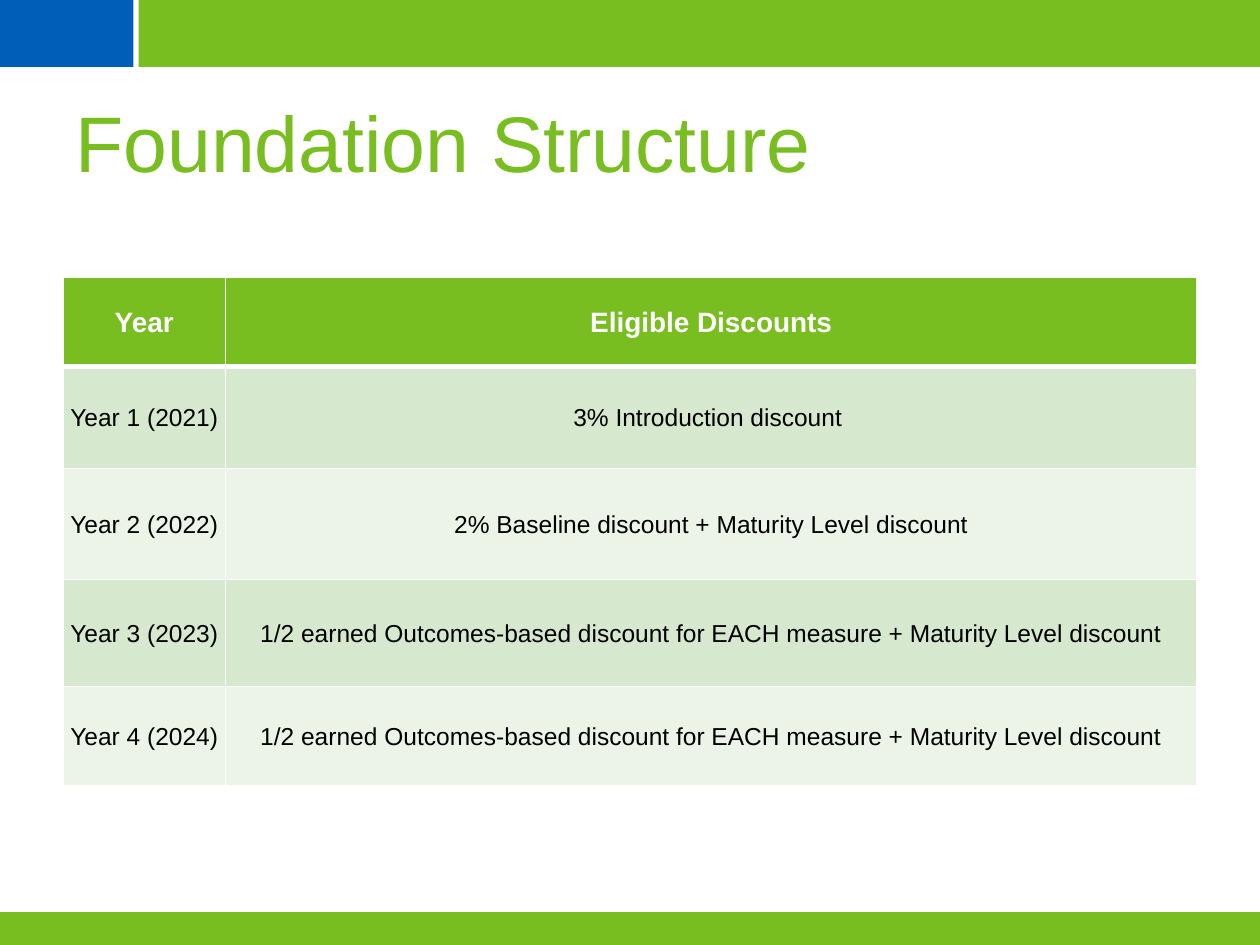
from dataclasses import dataclass

from lxml.etree import SubElement
from pptx import Presentation
from pptx.dml.color import RGBColor
from pptx.enum.shapes import MSO_SHAPE
from pptx.enum.text import MSO_ANCHOR, PP_ALIGN
from pptx.oxml.ns import qn
from pptx.slide import Slide
from pptx.table import _Cell
from pptx.text.text import TextFrame
from pptx.util import Inches, Pt

SLIDE_WIDTH = Inches(10)
SLIDE_HEIGHT = Inches(7.5)


@dataclass(frozen=True)
class Theme:
    font: str = "Arial"
    green: str = "78BE20"
    blue: str = "005EB8"
    white: str = "FFFFFF"
    black: str = "000000"
    bands: tuple[str, str] = ("D6E8CD", "ECF4E8")
    title_size: float = 45
    header_size: float = 16
    body_size: float = 14
    rule: float = 1
    header_rule: float = 3


@dataclass(frozen=True)
class Area:
    """Position and size in percent of the slide."""
    left: float
    top: float
    width: float
    height: float

    def lengths(self) -> tuple[int, int, int, int]:
        return (across(self.left), down(self.top),
                across(self.width), down(self.height))


@dataclass(frozen=True)
class Band:
    area: Area
    color: str


@dataclass(frozen=True)
class DiscountRow:
    year: str
    discount: str
    height: float


THEME = Theme()
BANDS = (
    Band(Area(11, 0, 89, 7.07), THEME.green),
    Band(Area(0, 0, 10.6, 7.07), THEME.blue),
    Band(Area(0, 96.53, 100, 3.47), THEME.green),
)
TITLE_AREA = Area(5, 8.13, 90, 13.6)
TABLE_AREA = Area(5, 29.33, 90, 53.87)
COLUMN_WIDTHS = (12.9, 77.1)
OUTCOMES = "1/2 earned Outcomes-based discount for EACH measure + Maturity Level discount"
ROWS = (
    DiscountRow("Year", "Eligible Discounts", 9.47),
    DiscountRow("Year 1 (2021)", "3% Introduction discount ", 10.8),
    DiscountRow("Year 2 (2022)", "2% Baseline discount + Maturity Level discount", 11.73),
    DiscountRow("Year 3 (2023)", OUTCOMES, 11.33),
    DiscountRow("Year 4 (2024)", OUTCOMES, 10.53),
)


def across(percent: float) -> int:
    return round(SLIDE_WIDTH * percent / 100)


def down(percent: float) -> int:
    return round(SLIDE_HEIGHT * percent / 100)


def write(frame: TextFrame, text: str, size: float, color: str,
          bold: bool = False, align: PP_ALIGN = PP_ALIGN.LEFT) -> None:
    frame.text = text
    paragraph = frame.paragraphs[0]
    paragraph.alignment = align
    font = paragraph.runs[0].font
    font.name = THEME.font
    font.size = Pt(size)
    font.bold = bold
    font.color.rgb = RGBColor.from_string(color)


def draw_band(slide: Slide, band: Band) -> None:
    bar = slide.shapes.add_shape(MSO_SHAPE.RECTANGLE, *band.area.lengths())
    bar.shadow.inherit = False
    bar.fill.solid()
    bar.fill.fore_color.rgb = RGBColor.from_string(band.color)
    bar.line.fill.background()


def draw_title(slide: Slide, text: str) -> None:
    title = slide.shapes.add_textbox(*TITLE_AREA.lengths()).text_frame
    title.word_wrap = True
    title.vertical_anchor = MSO_ANCHOR.MIDDLE
    write(title, text, THEME.title_size, THEME.green)


def set_borders(cell: _Cell, top: float, bottom: float) -> None:
    properties = cell._tc.get_or_add_tcPr()
    widths = {"L": THEME.rule, "R": THEME.rule, "T": top, "B": bottom}
    for side, width in widths.items():
        border = SubElement(properties, qn(f"a:ln{side}"), w=str(Pt(width)))
        fill = SubElement(border, qn("a:solidFill"))
        SubElement(fill, qn("a:srgbClr"), val=THEME.white)


def draw_cell(cell: _Cell, text: str, row_index: int) -> None:
    is_header = row_index == 0
    set_borders(cell,
                top=THEME.header_rule if row_index == 1 else THEME.rule,
                bottom=THEME.header_rule if is_header else THEME.rule)
    cell.fill.solid()
    cell.fill.fore_color.rgb = RGBColor.from_string(
        THEME.green if is_header else THEME.bands[(row_index - 1) % 2])
    cell.margin_left = cell.margin_top = cell.margin_right = Inches(0.01)
    cell.margin_bottom = 0
    cell.vertical_anchor = MSO_ANCHOR.MIDDLE
    write(cell.text_frame, text,
          THEME.header_size if is_header else THEME.body_size,
          THEME.white if is_header else THEME.black,
          is_header, PP_ALIGN.CENTER)


def draw_discounts(slide: Slide, rows: tuple[DiscountRow, ...]) -> None:
    discounts = slide.shapes.add_table(
        len(rows), len(COLUMN_WIDTHS), *TABLE_AREA.lengths()).table
    for column, width in zip(discounts.columns, COLUMN_WIDTHS):
        column.width = across(width)
    for row_index, row in enumerate(rows):
        discounts.rows[row_index].height = down(row.height)
        for column_index, text in enumerate((row.year, row.discount)):
            draw_cell(discounts.cell(row_index, column_index), text, row_index)


def main() -> None:
    presentation = Presentation()
    presentation.slide_width = SLIDE_WIDTH
    presentation.slide_height = SLIDE_HEIGHT
    slide = presentation.slides.add_slide(presentation.slide_layouts[6])
    for band in BANDS:
        draw_band(slide, band)
    draw_title(slide, "Foundation Structure")
    draw_discounts(slide, ROWS)
    presentation.save("out.pptx")


if __name__ == "__main__":
    main()
